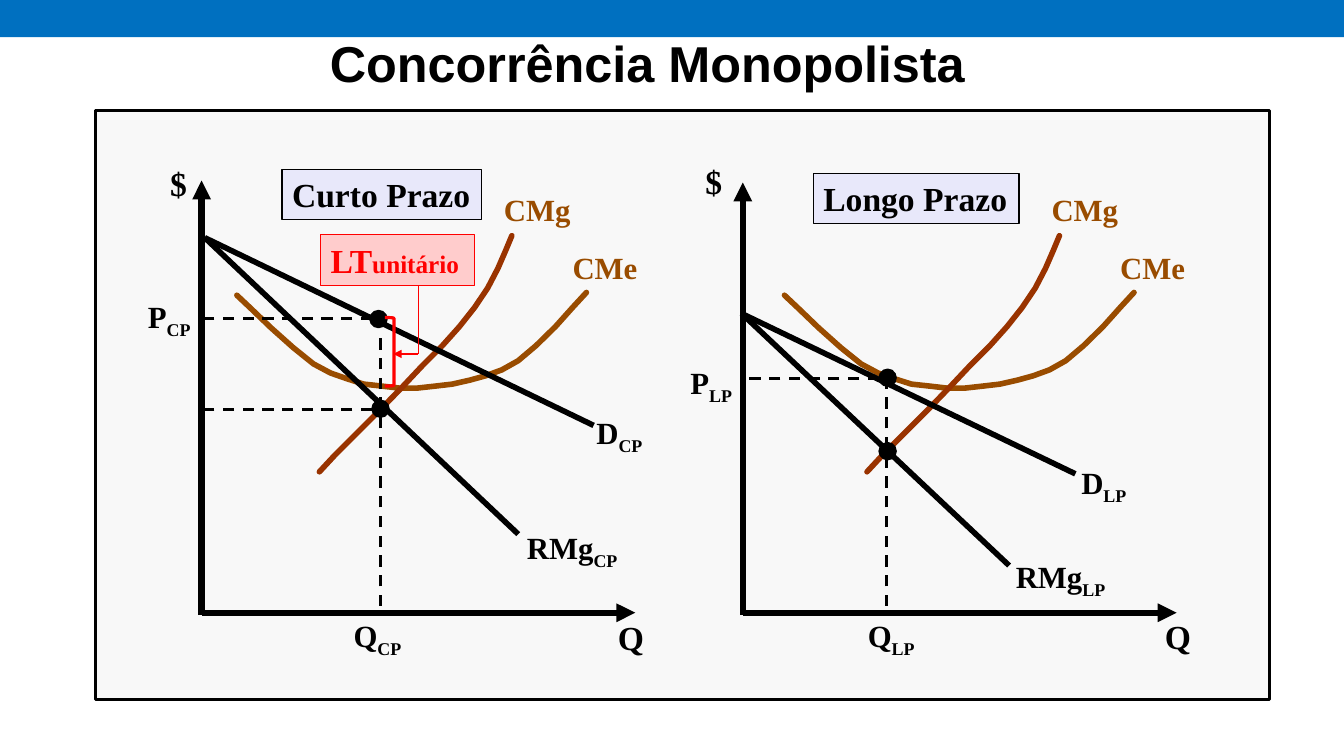
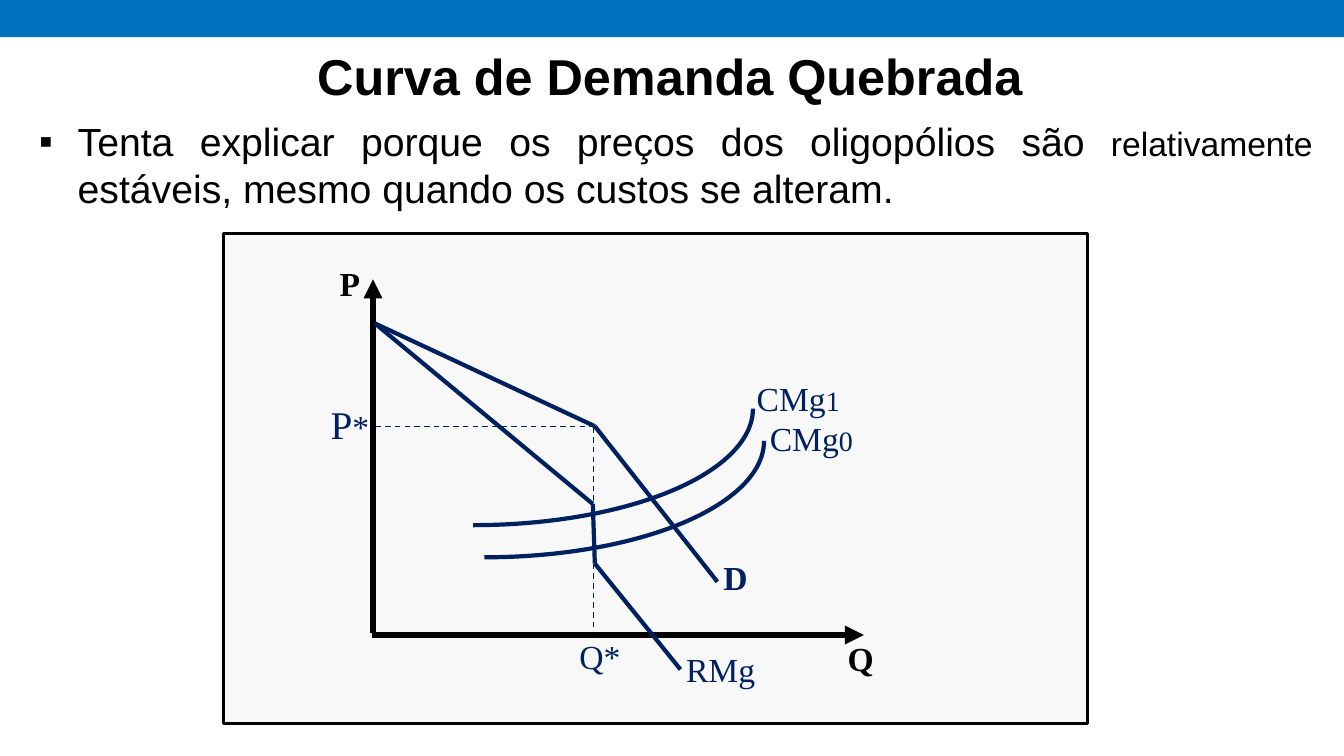
from lxml import etree
from pptx import Presentation
from pptx import util as u
from pptx.dml import color as dml_color
from pptx.enum import dml, shapes, text
from pptx.oxml import ns

BLACK, NAVY, RED = "000000", "002060", "FF0000"
BLUE, PALE, LILAC, PINK = "0070C0", "F8F8F8", "E8E8FA", "FFCCCC"
BROWN, RUST = "994C00", "993300"
SANS, SERIF = "Arial", "Times New Roman"


def rgb(value):
    return dml_color.RGBColor.from_string(value)


def assign(target, **values):
    for name, value in values.items():
        setattr(target, name, value)


def add_xml(parent, tag, **attributes):
    return etree.SubElement(parent, ns.qn(tag), attributes)


class Slides:
    """Shared style and the slide being drawn; lengths are in centimetres."""

    def __init__(self):
        self.deck = Presentation()
        assign(self.deck, slide_width=u.Cm(33.87), slide_height=u.Cm(19.05))
        self.page = None

    def start(self, title, left, top, width, height, anchor):
        self.page = self.deck.slides.add_slide(self.deck.slide_layouts[5])
        self.shape(0, -0.08, 33.87, 1.02, fill=BLUE)
        box = self.page.shapes.title
        assign(box, left=u.Cm(left), top=u.Cm(top),
               width=u.Cm(width), height=u.Cm(height))
        self.set_text(box, [(title, 36)], font=SANS, bold=True, anchor=anchor,
                      align=text.PP_ALIGN.CENTER)

    def set_text(self, box, spans, color=BLACK, font=SERIF, bold=False,
                 wrap=True, align=text.PP_ALIGN.LEFT,
                 anchor=text.MSO_ANCHOR.TOP):
        """Each span is (text, size) or (text, size, baseline)."""
        assign(box.text_frame, word_wrap=wrap, vertical_anchor=anchor,
               auto_size=text.MSO_AUTO_SIZE.NONE)
        para = box.text_frame.paragraphs[0]
        para.alignment = align
        for words, size, *baseline in spans:
            span = para.add_run()
            span.text = words
            assign(span.font, name=font, size=u.Pt(size), bold=bold)
            span.font.color.rgb = rgb(color)
            if baseline:
                span._r.get_or_add_rPr().set("baseline", str(baseline[0]))
        return para

    def label(self, left, top, width, spans, height=1.27, **style):
        box = self.page.shapes.add_textbox(
            u.Cm(left), u.Cm(top), u.Cm(width), u.Cm(height))
        return self.set_text(box, spans, **style)

    def outline(self, item, color, width):
        item.line.color.rgb = rgb(color)
        item.line.width = u.Pt(width)

    def shape(self, left, top, width, height, kind=shapes.MSO_SHAPE.RECTANGLE,
              fill=None, line=None, weight=1):
        item = self.page.shapes.add_shape(
            kind, u.Cm(left), u.Cm(top), u.Cm(width), u.Cm(height))
        item.shadow.inherit = False
        if fill:
            item.fill.solid()
            item.fill.fore_color.rgb = rgb(fill)
        else:
            item.fill.background()
        if line:
            self.outline(item, line, weight)
        else:
            item.line.fill.background()
        return item

    def dot(self, x, y, size=0.43):
        self.shape(x - size / 2, y - size / 2, size, size,
                   shapes.MSO_SHAPE.OVAL, fill=BLACK, line=BLACK)

    def line(self, start, end, color=BLACK, width=4, dash=False, arrow=False):
        item = self.page.shapes.add_connector(
            shapes.MSO_CONNECTOR.STRAIGHT, *map(u.Cm, (*start, *end)))
        self.outline(item, color, width)
        if dash:
            item.line.dash_style = dml.MSO_LINE.DASH
        if arrow:
            add_xml(item.line._get_or_add_ln(), "a:tailEnd", type="triangle")
        add_xml(item._element.spPr, "a:effectLst")

    def chain(self, points, **style):
        for start, end in zip(points, points[1:]):
            self.line(start, end, **style)

    def axis(self, start, end):
        self.line(start, end, width=4.5, arrow=True)

    def curve(self, points, shift, color):
        points = [(u.Cm(x + shift), u.Cm(y)) for x, y in points]
        builder = self.page.shapes.build_freeform(*points[0])
        builder.add_line_segments(points[1:], close=False)
        item = builder.convert_to_shape()
        item.shadow.inherit = False
        item.fill.background()
        self.outline(item, color, 4)
        item.line._get_or_add_ln().set("cap", "rnd")


# Cost curves of the short-run panel
AVERAGE_COST = [
    (5.97, 7.44), (6.32, 7.77), (6.83, 8.26), (7.39, 8.76), (7.9, 9.17),
    (8.33, 9.4), (8.76, 9.55), (9.17, 9.68), (9.63, 9.73), (10.06, 9.78),
    (10.52, 9.78), (10.97, 9.73), (11.4, 9.68), (11.84, 9.58), (12.24, 9.47),
    (12.65, 9.32), (13.06, 9.09), (13.51, 8.71), (14, 8.23), (14.43, 7.75),
    (14.78, 7.37)]
MARGINAL_COST = [
    (8.05, 11.89), (8.43, 11.48), (8.99, 10.92), (9.6, 10.31), (10.16, 9.73),
    (10.64, 9.22), (11.15, 8.71), (11.58, 8.23), (11.96, 7.75), (12.29, 7.26),
    (12.55, 6.76), (12.75, 6.3), (12.9, 5.94)]

PANELS = [
    dict(term="CP", caption=("Curto Prazo", 7.11, 4.27, 5.03), shift=0,
         origin=5.08, axis_top=4.55, money=(4.04, 3.99), quantity=(15.32, 15.42),
         start=(5.16, 5.99), demand=(14.96, 10.72), revenue=(13.06, 13.46),
         demand_label=(14.78, 10.31), revenue_label=(13.03, 13.21),
         drop=(9.58, 8.43), dots=[(9.54, 8.04), (9.59, 10.3)],
         levels=[8.03, 10.31],
         quantity_label=(8.66, 15.42), price_label=(3.48, 7.39)),
    dict(term="LP", caption=("Longo Prazo", 20.5, 4.37, 5.18), shift=13.8,
         origin=18.72, axis_top=4.6, money=(17.53, 3.94), quantity=(29.11, 15.39),
         start=(18.69, 7.9), demand=(27.1, 11.94), revenue=(25.43, 14.25),
         demand_label=(27, 11.56), revenue_label=(25.35, 13.94),
         drop=(22.35, 9.47), dots=[(22.37, 11.37), (22.37, 9.52)],
         levels=[9.53],
         quantity_label=(21.62, 15.42), price_label=(17.15, 9.04)),
]


def draw_panel(slides, panel):
    origin, term, shift = panel["origin"], panel["term"], panel["shift"]
    strong = dict(bold=True, wrap=False)

    # Axes
    slides.axis((origin, 15.5), (origin, panel["axis_top"]))
    slides.axis((origin, 15.44), (origin + 10.93, 15.44))
    slides.label(*panel["quantity"], 1.17, [("Q", 24)], **strong)
    slides.label(*panel["money"], 0.94, [("$", 24)], **strong)

    # Cost curves
    slides.curve(AVERAGE_COST, shift, BROWN)
    slides.curve(MARGINAL_COST, shift, RUST)
    for name, left, top in [("CMg", 12.45, 4.67), ("CMe", 14.18, 6.14)]:
        slides.label(left + shift, top, 2.2, [(name, 22)], color=BROWN, **strong)

    # Demand and marginal revenue
    for end in ("demand", "revenue"):
        slides.line(panel["start"], panel[end])

    # Equilibrium guides
    x, top = panel["drop"]
    slides.line((x, 15.27), (x, top), width=2, dash=True)
    for level in panel["levels"]:
        slides.line((x - 0.2, level), (origin, level), width=2, dash=True)
    for center in panel["dots"]:
        slides.dot(*center)

    # Labels with subscripts
    for name, key, width in [("D", "demand_label", 1.77),
                             ("RMg", "revenue_label", 2.88),
                             ("Q", "quantity_label", 1.8),
                             ("P", "price_label", 1.66)]:
        slides.label(*panel[key], width, [(name, 22), (term, 22, -25000)],
                     **strong)

    words, left, top, width = panel["caption"]
    box = slides.shape(left, top, width, 1.27, fill=LILAC, line=BLACK)
    slides.set_text(box, [(words, 24)], **strong)


def monopolistic_competition(slides):
    slides.start("Concorrência Monopolista", 3.99, 0.08, 24.66, 2.97,
                 text.MSO_ANCHOR.MIDDLE)
    slides.shape(2.41, 2.79, 29.59, 14.83, fill=PALE, line=BLACK, weight=2.25)
    for panel in PANELS:
        draw_panel(slides, panel)

    # Unit profit callout
    slides.shape(9.7, 8, 0.23, 1.73, shapes.MSO_SHAPE.RIGHT_BRACKET,
                 line=RED, weight=2.25)
    box = slides.shape(8.08, 5.92, 3.89, 1.27, fill=PINK, line=RED, weight=0.75)
    slides.set_text(box, [("LT", 24), ("unitário", 18)], color=RED, bold=True)
    slides.line((10.54, 7.19), (10.54, 8.92), RED, 1)
    slides.line((10.54, 8.92), (9.91, 8.92), RED, 1, arrow=True)


def kinked_demand(slides):
    slides.start("Curva de Demanda Quebrada", 5.39, 0.61, 22.99, 2.18,
                 text.MSO_ANCHOR.BOTTOM)
    slides.shape(5.64, 5.89, 21.77, 12.34, fill=PALE, line=BLACK, weight=2.25)

    # Bulleted statement
    para = slides.label(
        0.74, 2.84, 32.59,
        [("Tenta explicar porque os preços dos oligopólios são ", 28),
         ("relativamente", 24),
         (" estáveis, mesmo quando os custos se alteram.", 28)],
        height=2.8, font=SANS, align=text.PP_ALIGN.JUSTIFY)
    layout = para._p.get_or_add_pPr()
    layout.set("marL", str(u.Cm(0.97)))
    layout.set("indent", str(u.Cm(-0.97)))
    add_xml(add_xml(layout, "a:buClr"), "a:srgbClr", val=BLACK)
    add_xml(layout, "a:buSzPct", val="99000")
    add_xml(layout, "a:buFont", typeface=SANS)
    add_xml(layout, "a:buChar", char="▪")

    # Axes and guides
    origin, kink = (9.45, 8.15), (14.99, 10.74)
    slides.line((14.96, 10.77), (14.96, 16.03), NAVY, 1, dash=True)
    slides.line(kink, (9.45, 10.74), NAVY, 1, dash=True)
    slides.axis((9.4, 15.95), (9.4, 7.04))
    slides.axis((9.37, 16), (21.77, 16))

    # Demand, marginal revenue and marginal costs
    slides.chain([origin, kink, (18.08, 14.66)], color=NAVY, width=3)
    slides.chain([origin, (14.94, 12.7), (14.99, 14.2), (17.15, 16.87)],
                 color=NAVY, width=3)
    for left, top in [(9.27, 4.06), (8.99, 3.25)]:
        arc = slides.shape(left, top, 5.87, 14.1, shapes.MSO_SHAPE.ARC,
                           line=NAVY, weight=3)
        arc.rotation = 90

    # Labels
    for left, top, spans, color, bold in [
            (8.31, 6.5, [("P", 24)], BLACK, True),
            (21.11, 15.95, [("Q", 24)], BLACK, True),
            (17.98, 13.92, [("D", 24)], NAVY, True),
            (17.04, 16.23, [("RMg", 24)], NAVY, False),
            (14.35, 15.9, [("Q*", 24)], NAVY, False),
            (8.08, 9.96, [("P", 28), ("*", 24)], NAVY, False),
            (19.15, 10.41, [("CMg", 24), ("0", 20)], NAVY, False),
            (18.82, 9.4, [("CMg", 24), ("1", 20)], NAVY, False)]:
        slides.label(left, top, 3.1, spans, color=color, bold=bold)


def main():
    slides = Slides()
    monopolistic_competition(slides)
    kinked_demand(slides)
    slides.deck.save("out.pptx")


if __name__ == "__main__":
    main()
